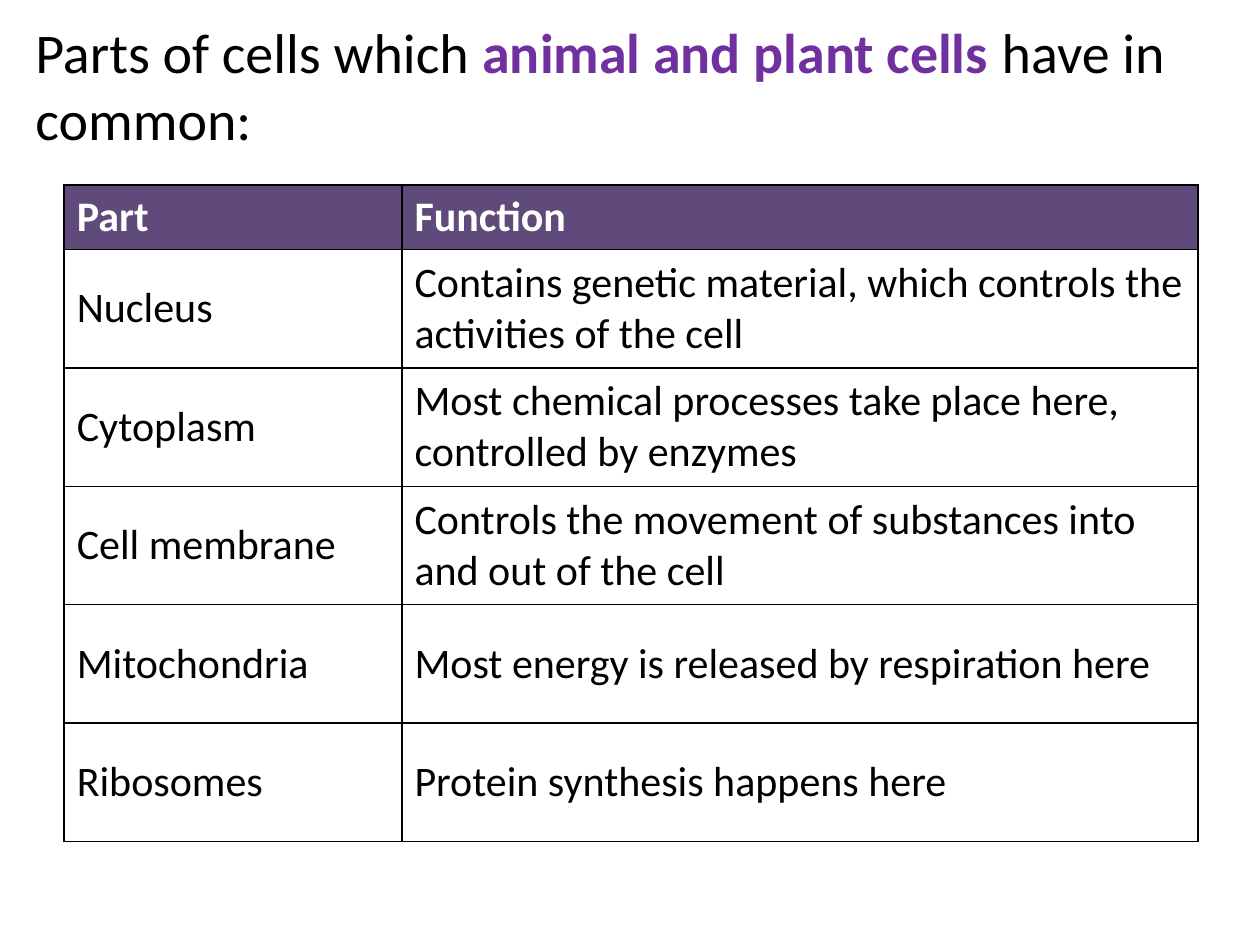
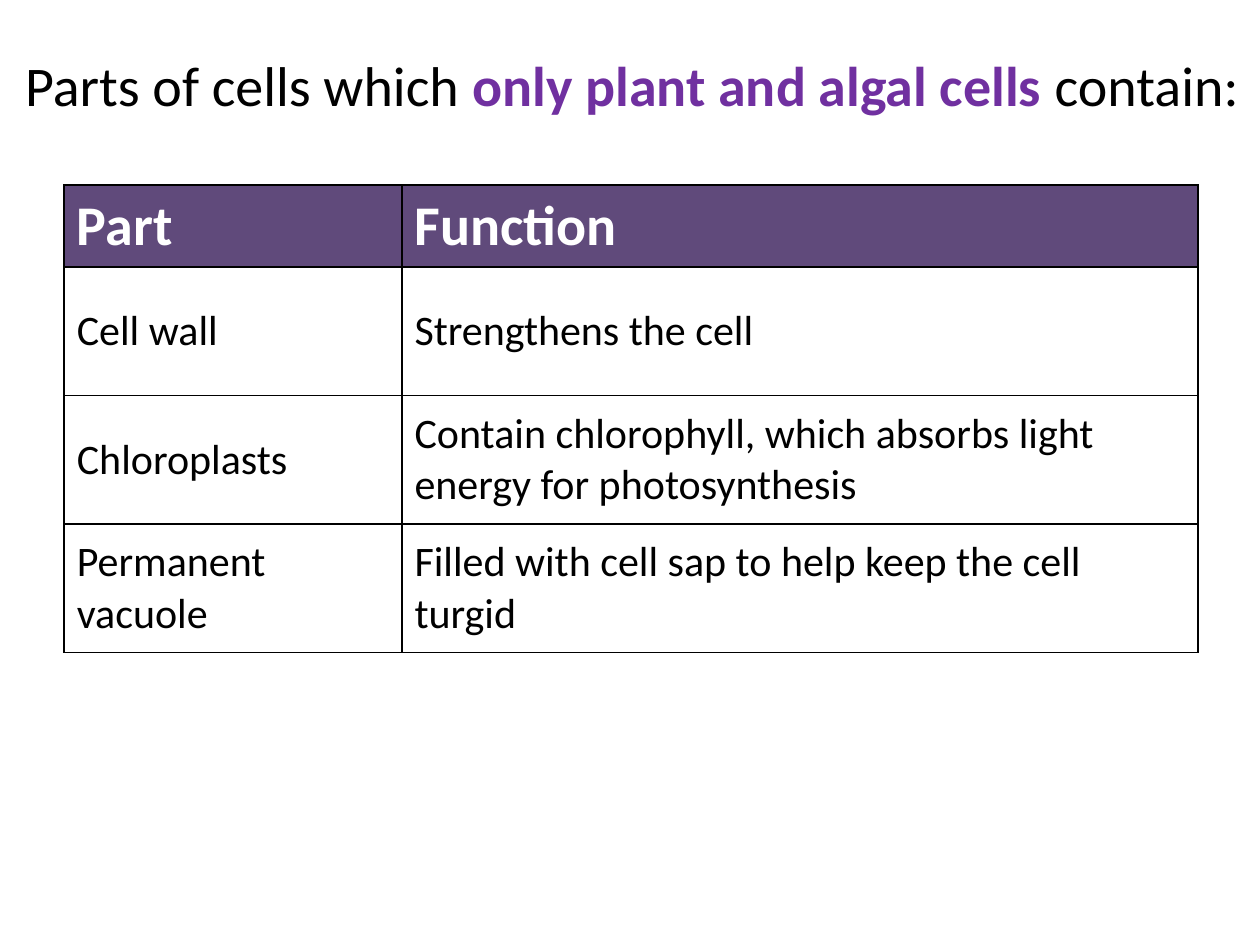
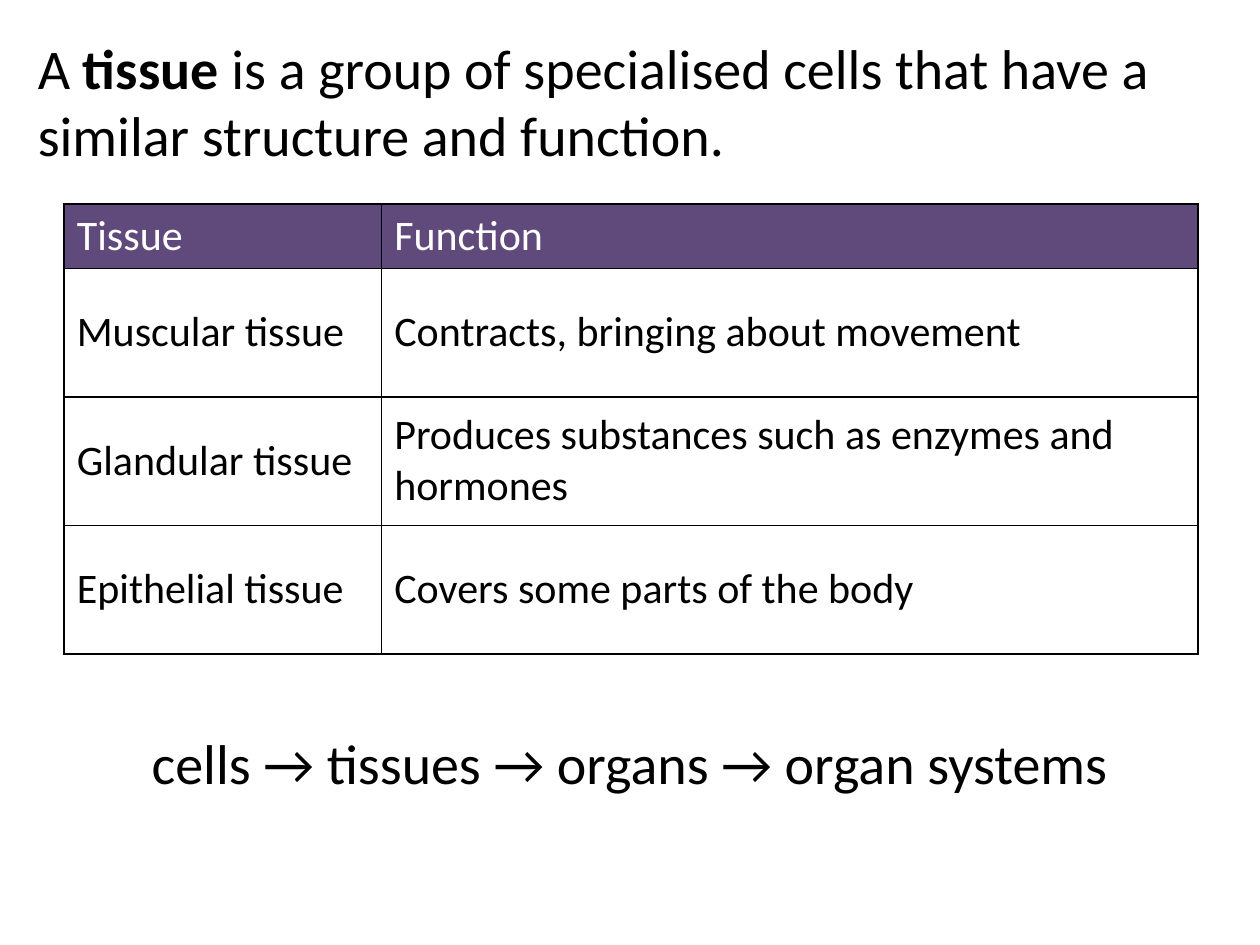
import pptx
import pptx.dml.color
import pptx.enum.text
import pptx.oxml
import pptx.oxml.ns
import pptx.util
from pptx.util import Inches

BLACK = pptx.dml.color.RGBColor(0x00, 0x00, 0x00)
WHITE = pptx.dml.color.RGBColor(0xFF, 0xFF, 0xFF)
HEADER_PURPLE = pptx.dml.color.RGBColor(0x60, 0x4A, 0x7B)
ACCENT_PURPLE = pptx.dml.color.RGBColor(0x70, 0x30, 0xA0)

FONT = "Calibri"
LARGE = 32
NORMAL = 24
MIDDLE = pptx.enum.text.MSO_ANCHOR.MIDDLE
CENTER = pptx.enum.text.PP_ALIGN.CENTER

TABLE_LEFT = 0.51
TABLE_WIDTH = 9
HEADER_HEIGHTS = {NORMAL: 0.51, LARGE: 0.65}
BORDER_XML = (
    '<a:{side} {namespace} w="12700"><a:solidFill><a:srgbClr val="{color}"/>'
    '</a:solidFill></a:{side}>'
)


class LessonDeck:
    """Holds the deck, its shared style and the current slide."""

    def __init__(self):
        self.deck = pptx.Presentation()
        self.deck.slide_width = Inches(10)
        self.deck.slide_height = Inches(7.5)
        self.page = None

    def add_page(self):
        self.page = self.deck.slides.add_slide(self.deck.slide_layouts[6])

    def style_span(self, span, size, color=BLACK, bold=False):
        span.font.name = FONT
        span.font.size = pptx.util.Pt(size)
        span.font.color.rgb = color
        span.font.bold = bold

    def add_statement(self, left, top, width, height, spans, align=None):
        """Add large text from (text, color, bold) spans."""
        box = self.page.shapes.add_textbox(
            Inches(left), Inches(top), Inches(width), Inches(height))
        frame = box.text_frame
        frame.word_wrap = True
        frame.vertical_anchor = MIDDLE
        frame.margin_left = frame.margin_top = frame.margin_right = 0
        frame.margin_bottom = Inches(0.1)
        para = frame.paragraphs[0]
        para.alignment = align
        for text, color, bold in spans:
            span = para.add_run()
            span.text = text
            self.style_span(span, LARGE, color, bold)

    def add_borders(self, cell):
        properties = cell._tc.get_or_add_tcPr()
        for side in ("lnL", "lnR", "lnT", "lnB"):
            properties.append(pptx.oxml.parse_xml(BORDER_XML.format(
                side=side, namespace=pptx.oxml.ns.nsdecls("a"), color=BLACK)))

    def add_table(self, top, first_width, row_height, rows,
                  header_size=NORMAL, header_bold=True):
        """Add a two-column table whose first row is the header."""
        heights = [HEADER_HEIGHTS[header_size]] + [row_height] * (len(rows) - 1)
        table = self.page.shapes.add_table(
            len(rows), 2, Inches(TABLE_LEFT), Inches(top),
            Inches(TABLE_WIDTH), Inches(sum(heights))).table
        table.horz_banding = False
        table.columns[0].width = Inches(first_width)
        table.columns[1].width = Inches(TABLE_WIDTH - first_width)
        for row_index, texts in enumerate(rows):
            table.rows[row_index].height = Inches(heights[row_index])
            for column_index, text in enumerate(texts):
                cell = table.cell(row_index, column_index)
                cell.text_frame.text = text
                cell.vertical_anchor = MIDDLE
                self.add_borders(cell)
                span = cell.text_frame.paragraphs[0].runs[0]
                if row_index == 0:
                    cell.fill.solid()
                    cell.fill.fore_color.rgb = HEADER_PURPLE
                    self.style_span(span, header_size, WHITE, header_bold)
                else:
                    cell.fill.background()
                    self.style_span(span, NORMAL)


def main():
    lesson = LessonDeck()

    # Parts shared by animal and plant cells
    lesson.add_page()
    lesson.add_table(1.47, 2.68, 0.94, [
        ("Part", "Function"),
        ("Nucleus", "Contains genetic material, which controls the activities of the cell"),
        ("Cytoplasm", "Most chemical processes take place here, controlled by enzymes"),
        ("Cell membrane", "Controls the movement of substances into and out of the cell"),
        ("Mitochondria", "Most energy is released by respiration here"),
        ("Ribosomes", "Protein synthesis happens here"),
    ])
    lesson.add_statement(0.28, 0.13, 9.45, 1.18, [
        ("Parts of cells which ", BLACK, False),
        ("animal and plant cells ", ACCENT_PURPLE, True),
        ("have in common:", BLACK, False),
    ])

    # Parts found only in plant and algal cells
    lesson.add_page()
    lesson.add_table(1.47, 2.68, 1.02, [
        ("Part", "Function"),
        ("Cell wall", "Strengthens the cell"),
        ("Chloroplasts", "Contain chlorophyll, which absorbs light energy for photosynthesis"),
        ("Permanent vacuole", "Filled with cell sap to help keep the cell turgid"),
    ], header_size=LARGE)
    lesson.add_statement(0.2, 0.4, 9.69, 0.64, [
        ("Parts of cells which ", BLACK, False),
        ("only plant and algal cells", ACCENT_PURPLE, True),
        (" contain:", BLACK, False),
    ])

    # Tissues and levels of organisation
    lesson.add_page()
    lesson.add_statement(0.3, 0.26, 9.4, 1.18, [
        ("A ", BLACK, False),
        ("tissue", BLACK, True),
        (" is a group of specialised cells that have a similar structure and function.",
         BLACK, False),
    ])
    lesson.add_table(1.62, 2.52, 1.02, [
        ("Tissue", "Function"),
        ("Muscular tissue", "Contracts, bringing about movement"),
        ("Glandular tissue", "Produces substances such as enzymes and hormones"),
        ("Epithelial tissue", "Covers some parts of the body"),
    ], header_bold=False)
    lesson.add_statement(0.3, 5.78, 9.4, 0.64, [
        ("cells → tissues → organs → organ systems", BLACK, False),
    ], align=CENTER)

    lesson.deck.save("out.pptx")


if __name__ == "__main__":
    main()
